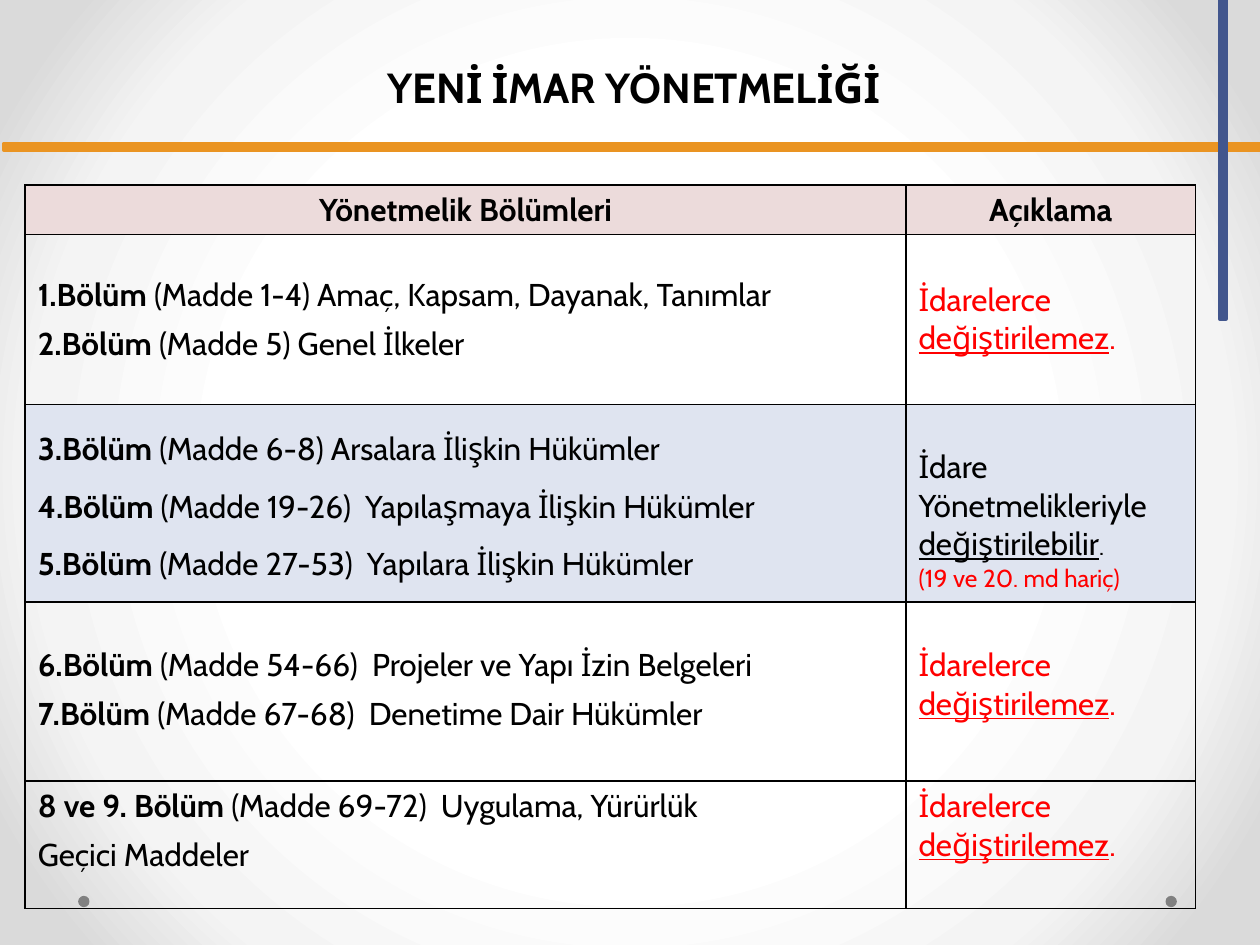
from lxml import etree
from pptx import Presentation
from pptx.dml.color import RGBColor
from pptx.enum.shapes import MSO_SHAPE
from pptx.enum.text import MSO_ANCHOR, PP_ALIGN
from pptx.oxml import parse_xml
from pptx.oxml.ns import nsdecls, qn
from pptx.util import Inches, Pt

RECTANGLE, OVAL = MSO_SHAPE.RECTANGLE, MSO_SHAPE.OVAL
TOP, MIDDLE = MSO_ANCHOR.TOP, MSO_ANCHOR.MIDDLE
LEFT, CENTER, JUSTIFY = PP_ALIGN.LEFT, PP_ALIGN.CENTER, PP_ALIGN.JUSTIFY
BLANK_LAYOUT = 6

BLACK, RED, GRAY = "000000", "FF0000", "808080"
ORANGE, NAVY = "EA9422", "42568D"
PINK, PALE_BLUE = "ECDBDB", "DFE4F0"
BACKGROUND_STOPS = ((50, "FFFFFF"), (76, "F4F4F4"), (92, "DADADA"))
LOWERED = 0.35  # top margin of cells whose text starts one line down


def color(hex_string):
    return RGBColor.from_string(hex_string)


def run(text, **style):
    return text, style


def paragraph(*runs, **layout):
    return runs, layout


def section(title, description):
    """Chapter line: bold title followed by its articles."""
    return run(title + " ", bold=True), run(description)


def cell(*paragraphs, **layout):
    return paragraphs, layout


def chapters(*sections, **layout):
    """Cell listing chapters, one justified line each."""
    return cell(*(paragraph(*runs, align=JUSTIFY, after=6) for runs in sections), **layout)


def header(text):
    return cell(paragraph(run(text, bold=True), align=CENTER, spacing=1.15),
                fill=PINK, margin=0)


def fixed_note(**layout):
    """Remark that administrations cannot change these chapters."""
    return cell(paragraph(run("İdarelerce ", ink=RED),
                          run("değiştirilemez", ink=RED, underline=True),
                          run(".", ink=RED)), **layout)


class SlideBuilder:
    """Holds the text style and the current slide."""
    font = "Cabin"
    size = 18

    def __init__(self, slide):
        self.slide = slide

    def background(self, stops):
        """Radial gradient spreading from the slide centre."""
        self.slide.background.fill.solid()
        properties = self.slide.element.find(".//" + qn("p:bgPr"))
        gradient = parse_xml(
            f'<a:gradFill {nsdecls("a")} rotWithShape="1"><a:gsLst/><a:path path="circle">'
            '<a:fillToRect l="50000" t="50000" r="50000" b="50000"/></a:path></a:gradFill>')
        for position, shade in stops:
            stop = etree.SubElement(gradient[0], qn("a:gs"), pos=str(position * 1000))
            etree.SubElement(stop, qn("a:srgbClr"), val=shade)
        properties.replace(properties[0], gradient)

    def shape(self, kind, left, top, width, height, fill, line_width=0):
        shape = self.slide.shapes.add_shape(
            kind, Inches(left), Inches(top), Inches(width), Inches(height))
        shape.shadow.inherit = False
        shape.fill.solid()
        shape.fill.fore_color.rgb = color(fill)
        if line_width:
            shape.line.color.rgb = color(fill)
            shape.line.width = Pt(line_width)
        else:
            shape.line.fill.background()

    def add_run(self, target, text, ink=BLACK, size=None, bold=False, underline=False):
        text_run = target.add_run()
        text_run.text = text
        font = text_run.font
        font.name = self.font
        font.size = Pt(size or self.size)
        font.bold = bold
        font.underline = underline
        font.color.rgb = color(ink)

    def add_paragraphs(self, frame, paragraphs):
        for index, (runs, layout) in enumerate(paragraphs):
            target = frame.add_paragraph() if index else frame.paragraphs[0]
            target.alignment = layout.get("align", LEFT)
            target.line_spacing = layout.get("spacing", 1.0)
            target.space_after = Pt(layout.get("after", 0))
            for text, style in runs:
                self.add_run(target, text, **style)

    def text(self, left, top, width, height, *paragraphs):
        box = self.slide.shapes.add_textbox(
            Inches(left), Inches(top), Inches(width), Inches(height))
        box.text_frame.word_wrap = True
        self.add_paragraphs(box.text_frame, paragraphs)

    def border(self, table_cell, width=1):
        properties = table_cell._tc.get_or_add_tcPr()
        for side in "LRTB":
            line = etree.SubElement(properties, qn(f"a:ln{side}"), w=str(Pt(width)))
            fill = etree.SubElement(line, qn("a:solidFill"))
            etree.SubElement(fill, qn("a:srgbClr"), val=BLACK)

    def fill_cell(self, table_cell, paragraphs, fill=None, anchor=TOP, margin=0.05, top=None):
        self.border(table_cell)
        if fill:
            table_cell.fill.solid()
            table_cell.fill.fore_color.rgb = color(fill)
        else:
            table_cell.fill.background()
        table_cell.vertical_anchor = anchor
        table_cell.margin_top = Inches(margin if top is None else top)
        table_cell.margin_bottom = Inches(margin)
        table_cell.margin_left = table_cell.margin_right = Inches(0.07 if margin == 0 else 0.1)
        self.add_paragraphs(table_cell.text_frame, paragraphs)

    def table(self, left, top, widths, heights, rows):
        table = self.slide.shapes.add_table(
            len(heights), len(widths), Inches(left), Inches(top),
            Inches(sum(widths)), Inches(sum(heights))).table
        for column, width in zip(table.columns, widths):
            column.width = Inches(width)
        for row, height, contents in zip(table.rows, heights, rows):
            row.height = Inches(height)
            for table_cell, (paragraphs, layout) in zip(row.cells, contents):
                self.fill_cell(table_cell, paragraphs, **layout)


def main():
    presentation = Presentation()
    presentation.slide_width, presentation.slide_height = Inches(10), Inches(7.5)
    builder = SlideBuilder(
        presentation.slides.add_slide(presentation.slide_layouts[BLANK_LAYOUT]))

    builder.background(BACKGROUND_STOPS)
    for left in (9.25, 0.62):
        builder.shape(OVAL, left, 7.11, 0.09, 0.09, GRAY)
    builder.shape(RECTANGLE, 0.03, 1.14, 9.97, 0.05, ORANGE, 2.25)
    builder.shape(RECTANGLE, 9.68, 0, 0.05, 2.53, NAVY, 2.25)

    changeable = [section("3.Bölüm", "(Madde 6-8) Arsalara İlişkin Hükümler"),
                  section("4.Bölüm", "(Madde 19-26)  Yapılaşmaya İlişkin Hükümler"),
                  section("5.Bölüm", "(Madde 27-53)  Yapılara İlişkin Hükümler")]
    rows = [
        (header("Yönetmelik Bölümleri"), header("Açıklama")),
        (chapters(section("1.Bölüm", "(Madde 1-4) Amaç, Kapsam, Dayanak, Tanımlar"),
                  section("2.Bölüm", "(Madde 5) Genel İlkeler"), anchor=MIDDLE),
         fixed_note(anchor=MIDDLE)),
        (cell(*(paragraph(*runs, spacing=1.5) for runs in changeable), fill=PALE_BLUE),
         cell(paragraph(run("İdare Yönetmelikleriyle "),
                        run("değiştirilebilir", underline=True), run(".", size=14)),
              paragraph(run("(19 ve 20. md hariç)", ink=RED, size=14)),
              fill=PALE_BLUE, top=LOWERED)),
        (chapters(section("6.Bölüm", "(Madde 54-66)  Projeler ve Yapı İzin Belgeleri"),
                  section("7.Bölüm", "(Madde 67-68)  Denetime Dair Hükümler"), top=LOWERED),
         fixed_note(top=LOWERED)),
        (chapters(section("8 ve 9. Bölüm", "(Madde 69-72)  Uygulama, Yürürlük"),
                  [run("Geçici Maddeler")]),
         fixed_note()),
    ]
    builder.table(0.2, 1.47, (6.99, 2.3), (0.39, 1.35, 1.57, 1.42, 1.01), rows)
    builder.text(2.72, 0.44, 4.62, 0.5, paragraph(
        run("YENİ İMAR YÖNETMELİĞİ", size=24, bold=True), align=CENTER))

    presentation.save("out.pptx")


if __name__ == "__main__":
    main()
